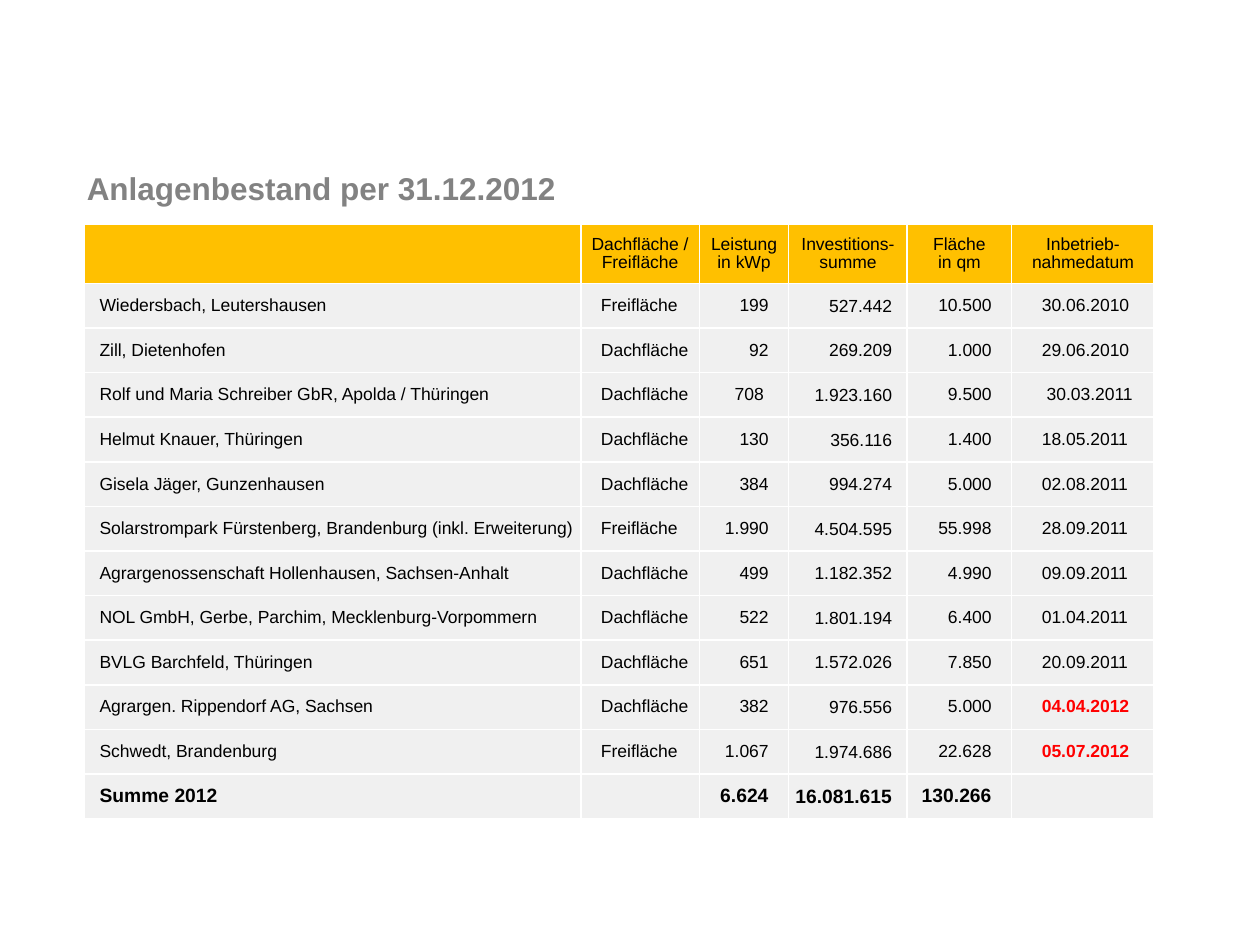
from lxml.etree import SubElement
from pptx import Presentation
from pptx.dml.color import RGBColor
from pptx.enum.text import MSO_ANCHOR, PP_ALIGN
from pptx.oxml.ns import qn
from pptx.util import Inches, Pt

COLORS = {"title": "828282", "header": "FFC000", "body": "F0F0F0",
          "text": "000000", "new": "FF0000", "border": "FFFFFF"}
FONT = "Arial"
TIGHT = 0.95
HEADER_HEIGHT, ROW_HEIGHT = 0.47, 0.354

# width, heading, alignment, margins (left, top, right)
COLUMNS = [
    (3.94, "", PP_ALIGN.LEFT, (0.12, 0, 0)),
    (0.94, "Dachfläche / Freifläche", PP_ALIGN.LEFT, (0.16, 0, 0)),
    (0.71, "Leistung\nin kWp", PP_ALIGN.RIGHT, (0, 0, 0.16)),
    (0.94, "Investitions-summe", PP_ALIGN.RIGHT, (0.01, 0.01, 0.12)),
    (0.83, "Fläche\nin qm", PP_ALIGN.RIGHT, (0, 0, 0.16)),
    (1.13, "Inbetrieb-nahmedatum", PP_ALIGN.LEFT, (0.24, 0, 0.12)),
]
PLANTS = [
    ("Wiedersbach, Leutershausen", "Freifläche", "199", "527.442", "10.500", "30.06.2010"),
    ("Zill, Dietenhofen", "Dachfläche", "92", "269.209", "1.000", "29.06.2010"),
    ("Rolf und Maria Schreiber GbR, Apolda / Thüringen", "Dachfläche", "708 ", "1.923.160",
     "9.500", " 30.03.2011"),
    ("Helmut Knauer, Thüringen", "Dachfläche", "130", "356.116", "1.400", "18.05.2011"),
    ("Gisela Jäger, Gunzenhausen", "Dachfläche", "384", "994.274", "5.000", "02.08.2011"),
    ("Solarstrompark Fürstenberg, Brandenburg (inkl. Erweiterung)", "Freifläche", "1.990",
     "4.504.595", "55.998", "28.09.2011"),
    ("Agrargenossenschaft Hollenhausen, Sachsen-Anhalt", "Dachfläche", "499", "1.182.352",
     "4.990", "09.09.2011"),
    ("NOL GmbH, Gerbe, Parchim, Mecklenburg-Vorpommern", "Dachfläche", "522", "1.801.194",
     "6.400", "01.04.2011"),
    ("BVLG Barchfeld, Thüringen", "Dachfläche", "651", "1.572.026", "7.850", "20.09.2011"),
    ("Agrargen. Rippendorf AG, Sachsen", "Dachfläche", "382", "976.556", "5.000", "04.04.2012"),
    ("Schwedt, Brandenburg", "Freifläche", "1.067", "1.974.686", "22.628", "05.07.2012"),
]
TOTAL = ("Summe 2012", "", "6.624", "16.081.615", "130.266", "")


def set_all(obj, values):
    for name, value in values.items():
        setattr(obj, name, value)


class SlideBuilder:
    def __init__(self, slide):
        self.slide = slide

    def text(self, tf, text, size, color="text", bold=False, align=PP_ALIGN.LEFT,
             spacing=TIGHT):
        """Fill a text frame, one paragraph per line of text."""
        for i, line in enumerate(text.split("\n")):
            p = tf.paragraphs[0] if i == 0 else tf.add_paragraph()
            set_all(p, {"alignment": align, "line_spacing": spacing})
            if line:
                r = p.add_run()
                r.text = line
                set_all(r.font, {"name": FONT, "size": Pt(size), "bold": bold})
                r.font.color.rgb = RGBColor.from_string(COLORS[color])

    def title(self, text, left, top, width, height):
        sp = self.slide.shapes.add_textbox(*map(Inches, (left, top, width, height)))
        set_all(sp.text_frame, {"word_wrap": True, "vertical_anchor": MSO_ANCHOR.MIDDLE})
        self.text(sp.text_frame, text, 18, "title", True)

    def borders(self, cell):
        tc_pr = cell._tc.get_or_add_tcPr()
        for i, side in enumerate(("lnL", "lnR", "lnT", "lnB")):
            ln = SubElement(tc_pr, qn(f"a:{side}"), w=str(Pt(1)))
            fill = SubElement(ln, qn("a:solidFill"))
            SubElement(fill, qn("a:srgbClr"), val=COLORS["border"])
            tc_pr.insert(i, ln)

    def cell(self, cell, text, fill, margins=(0, 0, 0), **style):
        left, top, right = map(Inches, margins)
        set_all(cell, {"margin_left": left, "margin_top": top, "margin_right": right,
                       "margin_bottom": 0, "vertical_anchor": MSO_ANCHOR.MIDDLE})
        cell.fill.solid()
        cell.fill.fore_color.rgb = RGBColor.from_string(COLORS[fill])
        self.borders(cell)
        self.text(cell.text_frame, text, **style)

    def table(self, left, top):
        rows = [*PLANTS, TOTAL]
        heights = [HEADER_HEIGHT] + [ROW_HEIGHT] * len(rows)
        width = sum(column[0] for column in COLUMNS)
        table = self.slide.shapes.add_table(
            len(heights), len(COLUMNS),
            *map(Inches, (left, top, width, sum(heights)))).table
        for row, height in zip(table.rows, heights):
            row.height = Inches(height)
        for c, (width, heading, align, margins) in enumerate(COLUMNS):
            table.columns[c].width = Inches(width)
            self.cell(table.cell(0, c), heading, "header", size=10, align=PP_ALIGN.CENTER)
            for r, row in enumerate(rows, 1):
                if row is TOTAL:
                    style = {"size": 11, "bold": True}
                else:
                    new = row[c].endswith(".2012")
                    style = {"size": 10, "bold": new, "color": "new" if new else "text",
                             "spacing": Pt(11)}
                self.cell(table.cell(r, c), row[c], "body", margins, align=align, **style)


def main():
    prs = Presentation()
    set_all(prs, {"slide_width": Inches(10), "slide_height": Inches(7.5)})
    s = SlideBuilder(prs.slides.add_slide(prs.slide_layouts[6]))
    s.title("Anlagenbestand per 31.12.2012", 0.59, 1.34, 4.88, 0.33)
    s.table(0.67, 1.78)
    prs.save("out.pptx")


if __name__ == "__main__":
    main()
